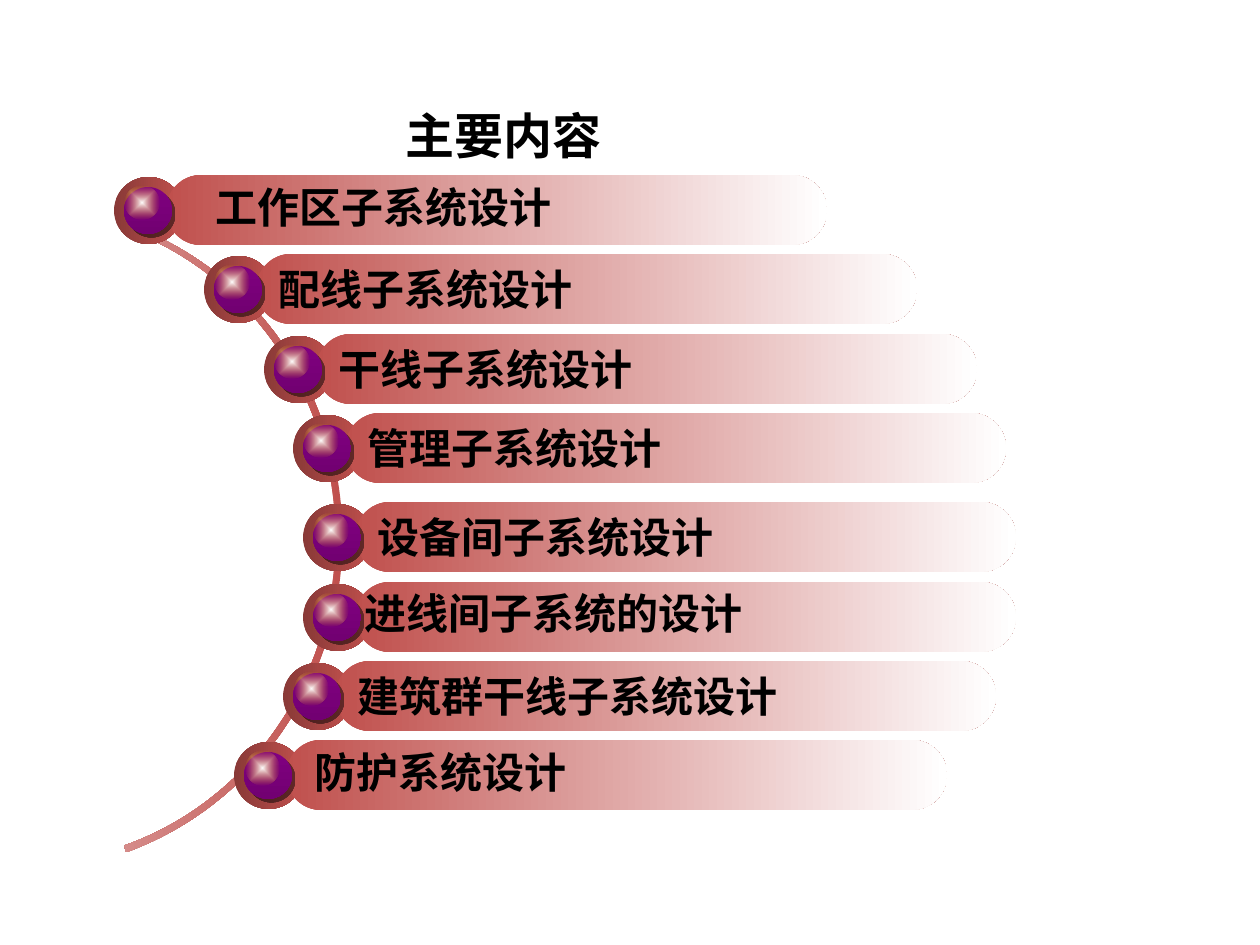
"""Build the contents slide: eight gradient bars strung along an arc."""
from lxml import etree
from pptx import Presentation
from pptx.dml.color import RGBColor
from pptx.enum.shapes import MSO_SHAPE
from pptx.enum.text import MSO_ANCHOR, PP_ALIGN
from pptx.oxml.ns import qn
from pptx.util import Pt

PX = 914400 // 126
OVAL, BAR = MSO_SHAPE.OVAL, MSO_SHAPE.ROUNDED_RECTANGLE
MIDDLE, LEFT, CENTER = MSO_ANCHOR.MIDDLE, PP_ALIGN.LEFT, PP_ALIGN.CENTER
LATIN, HAN = "Calibri", "Noto Sans CJK SC"
COLORS = {
    "red": "C0504D", "brown": "893937", "white": "FFFFFF", "purple": "800080",
    "plum": "720072", "glow": "E9940B", "black": "000000",
}


def style(s, start, end, angle=0):
    s.shadow.inherit = False
    s.line.fill.background()
    s.fill.gradient()
    s.fill.gradient_angle = angle
    for stop, name in zip(s.fill.gradient_stops, (start, end)):
        stop.color.rgb = RGBColor.from_string(COLORS[name])
    return s


def write(s, text, size, font, align=LEFT):
    tf = s.text_frame
    tf.word_wrap = align == CENTER
    tf.vertical_anchor = MIDDLE
    p = tf.paragraphs[0]
    p.text = text
    p.alignment = align
    p.font.size = Pt(size)
    p.font.bold = True
    p.font.name = font
    p.font.color.rgb = RGBColor.from_string(COLORS["black"])
    rpr = p._p.pPr.find(qn("a:defRPr"))
    etree.SubElement(rpr, qn("a:ea"), typeface=HAN)


prs = Presentation()
prs.slide_width, prs.slide_height = 1260 * PX, 945 * PX
slide = prs.slides.add_slide(prs.slide_layouts[5])
shapes = slide.shapes

arc_w, arc_h = 665, 640
builder = shapes.build_freeform(0, 0, scale=PX)
builder.add_line_segments([(arc_w, 0), (arc_w, arc_h)])
arc = style(builder.convert_to_shape(), "red", "white", 270)
arc.left, arc.top, arc.rotation = -310 * PX, 217 * PX, 90
outline = arc._element.spPr.find(".//" + qn("a:path"))
for step in list(outline):
    outline.remove(step)
outline.set("w", str(arc_w * PX))
outline.set("h", str(arc_h * PX))
steps = [
    ("moveTo", [(24, 218)]),
    ("cubicBezTo", [(69, 92), (194, 7), (333, 7)]),
    ("cubicBezTo", [(473, 7), (596, 92), (641, 218)]),
    ("lnTo", [(648, 217)]),
    ("cubicBezTo", [(601, 87), (475, 0), (333, 0)]),
    ("cubicBezTo", [(190, 0), (64, 87), (19, 217)]),
    ("close", []),
]
for name, points in steps:
    step = etree.SubElement(outline, qn("a:" + name))
    for x, y in points:
        etree.SubElement(step, qn("a:pt"), x=str(x * PX), y=str(y * PX))

title = shapes.title
title.left, title.top, title.width, title.height = 64 * PX, 95 * PX, 879 * PX, 79 * PX
write(title, "主要内容", 28, LATIN, CENTER)

rows = [
    (114, 175, "工作区子系统设计", HAN, (203, 185)),
    (204, 254, "配线子系统设计", HAN, None),
    (264, 334, "干线子系统设计", HAN, None),
    (293, 413, "管理子系统设计", LATIN, None),
    (303, 502, "设备间子系统设计", LATIN, None),
    (303, 582, "进线间子系统的设计", HAN, (352, 591)),
    (283, 661, "建筑群干线子系统设计", LATIN, None),
    (234, 740, "防护系统设计", HAN, (302, 750)),
]
parts = [
    (OVAL, 0, 2, 69, 67, "brown", "red", 0),
    (BAR, 52, 0, 661, 70, "red", "white", 0),
    (OVAL, 10, 12, 48, 47, "purple", "plum", 270),
    (OVAL, 11, 11, 34, 34, "white", "glow", 0),
]
for x, y, text, font, label_at in rows:
    group = shapes.add_group_shape().shapes
    ring, bar, ball, shine = [
        style(group.add_shape(kind, (x + dx) * PX, (y + dy) * PX, w * PX, h * PX), start, end, angle)
        for kind, dx, dy, w, h, start, end, angle in parts
    ]
    bar.adjustments[0] = 0.5

    effects = ball._element.spPr.find(qn("a:effectLst"))
    shadow = etree.SubElement(effects, qn("a:outerShdw"), dist="35560", dir="2700000")
    color = etree.SubElement(shadow, qn("a:srgbClr"), val=COLORS["black"])
    etree.SubElement(color, qn("a:alpha"), val="50000")

    grad = shine._element.spPr.find(qn("a:gradFill"))
    etree.SubElement(grad.findall(".//" + qn("a:srgbClr"))[1], qn("a:alpha"), val="0")
    grad.remove(grad.find(qn("a:lin")))
    path = etree.SubElement(grad, qn("a:path"), path="shape")
    etree.SubElement(path, qn("a:fillToRect"), l="50000", t="50000", r="50000", b="50000")

    target = bar
    if label_at:
        left, top = label_at
        target = shapes.add_shape(BAR, left * PX, top * PX, 643 * PX, 44 * PX)
        target.adjustments[0] = 0
        target.shadow.inherit = False
        target.fill.background()
        target.line.fill.background()
    write(target, text, 24, font)

prs.save("out.pptx")
